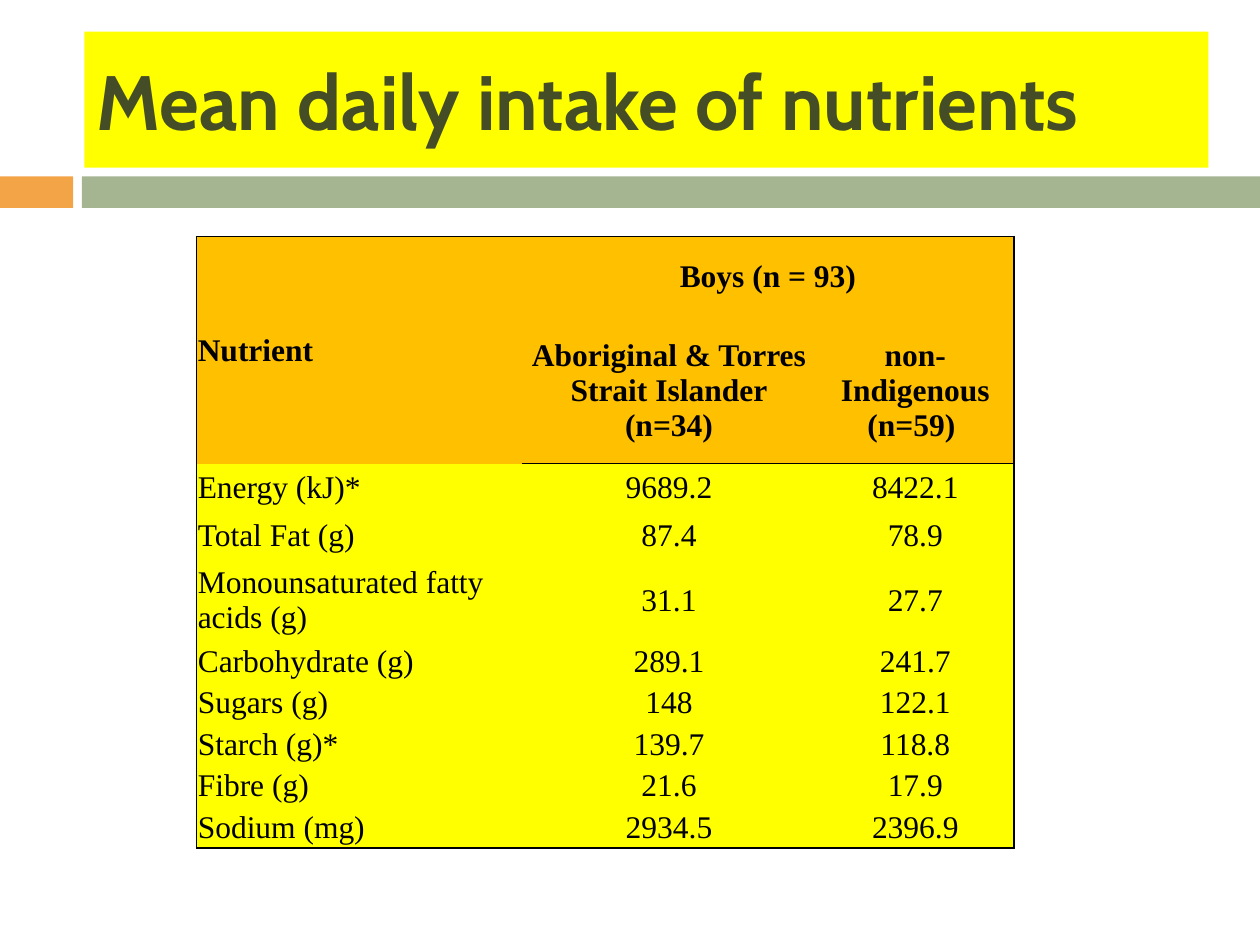
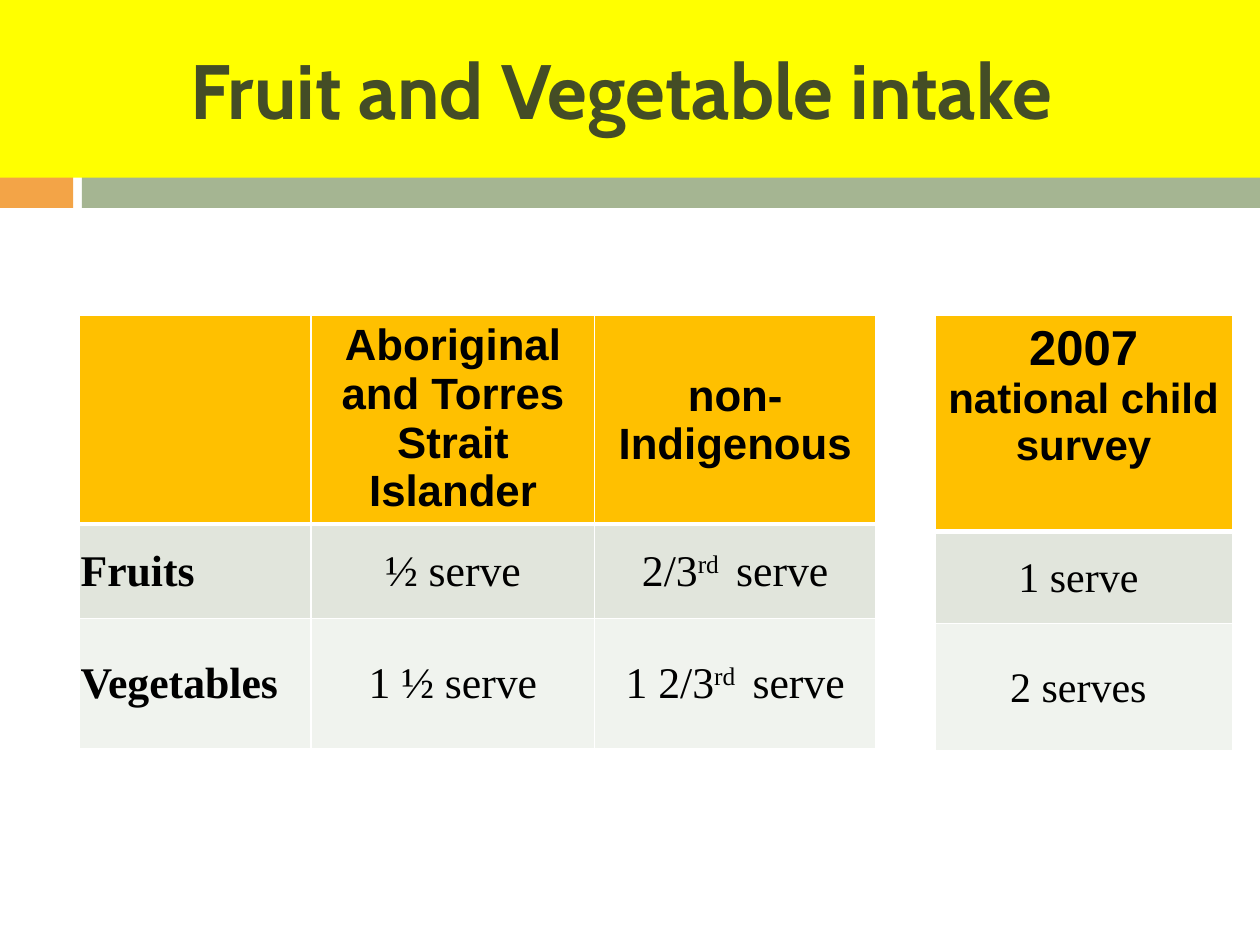
"""Build two slides on children's nutrient, fruit and vegetable intake."""
from pptx import Presentation
from pptx.dml.color import RGBColor
from pptx.enum.shapes import MSO_SHAPE
from pptx.enum.text import MSO_ANCHOR, PP_ALIGN
from pptx.oxml import parse_xml
from pptx.oxml.ns import nsdecls
from pptx.util import Inches, Pt

ORANGE, SAGE, YELLOW, AMBER = "F3A447", "A5B592", "FFFF00", "FFC000"
OLIVE, BLACK, WHITE = "444D26", "000000", "FFFFFF"
STRIPES = ["E1E5DC", "F0F3EE"]
SERIF, SANS, TITLE_FONT = "Times New Roman", "Arial", "Cabin"
NO_GRID_STYLE = "{2D5ABB26-0587-4C30-8999-92F81FD0307C}"
hex_color = RGBColor.from_string

deck = Presentation()
deck.slide_width, deck.slide_height = Inches(10), Inches(7.5)
UNIT = deck.slide_width // 100


def write(paragraph, text, font, size, bold=False, color=BLACK, raised=False):
    for number, line in enumerate(text.split("\n")):
        if number:
            paragraph.add_line_break()
        run = paragraph.add_run()
        run.text = line
        run.font.name, run.font.size, run.font.bold = font, Pt(size), bold
        run.font.color.rgb = hex_color(color)
        if raised:
            run.font._element.set("baseline", "30000")


def style_cell(cell, fill, edges, centred, roomy=False):
    for side in "LRTB":
        if side in edges:
            color, width = edges[side]
            paint = f'<a:solidFill><a:srgbClr val="{color}"/></a:solidFill>'
        else:
            width, paint = 0, "<a:noFill/>"
        cell._tc.get_or_add_tcPr().append(parse_xml(
            f'<a:ln{side} {nsdecls("a")} w="{Pt(width)}">{paint}</a:ln{side}>'))
    cell.fill.solid()
    cell.fill.fore_color.rgb = hex_color(fill)
    cell.margin_left = cell.margin_right = Inches(0.1 if roomy else 0.01)
    cell.margin_top = Inches(0.05 if roomy else 0.01)
    cell.margin_bottom = Inches(0.05 if roomy else 0)
    cell.vertical_anchor = MSO_ANCHOR.TOP if roomy else MSO_ANCHOR.MIDDLE
    cell.text_frame.paragraphs[0].alignment = PP_ALIGN.CENTER if centred else PP_ALIGN.LEFT


titles = [
    ("Mean daily intake of nutrients", (6.7, 2.5, 89.2, 10.8), PP_ALIGN.LEFT),
    ("Fruit and Vegetable intake ", (0, 0, 100, 14.1), PP_ALIGN.CENTER),
]
slides = []
for title, title_area, alignment in titles:
    slide = deck.slides.add_slide(deck.slide_layouts[6])
    slides.append(slide)
    for area, color in [((0, 14, 5.8, 2.5), ORANGE),
                        ((6.5, 14, 93.5, 2.5), SAGE),
                        (title_area, YELLOW)]:
        band = slide.shapes.add_shape(MSO_SHAPE.RECTANGLE, *[int(n * UNIT) for n in area])
        band.shadow.inherit = False
        band.fill.solid()
        band.fill.fore_color.rgb = hex_color(color)
        band.line.fill.background()
    band.text_frame.word_wrap = True
    band.text_frame.vertical_anchor = MSO_ANCHOR.MIDDLE
    heading = band.text_frame.paragraphs[0]
    heading.alignment = alignment
    write(heading, title, TITLE_FONT, 44, True, OLIVE)

nutrients = [
    [["Nutrient"], ["Boys (n = 93)"], []],
    [[], ["Aboriginal & Torres Strait Islander\n(n=34)"], ["non-Indigenous\n(n=59) "]],
    [["Energy (kJ)*"], ["9689.2"], ["8422.1"]],
    [["Total Fat (g)"], ["87.4"], ["78.9"]],
    [["Monounsaturated fatty acids (g)"], ["31.1"], ["27.7"]],
    [["Carbohydrate (g)"], ["289.1"], ["241.7"]],
    [["Sugars (g)"], ["148"], ["122.1"]],
    [["Starch (g)*"], ["139.7"], ["118.8"]],
    [["Fibre (g)"], ["21.6"], ["17.9"]],
    [["Sodium (mg)"], ["2934.5"], ["2396.9"]],
]
serves = [
    [[], ["Aboriginal and Torres Strait Islander"], ["non-Indigenous"]],
    [["Fruits"], ["½ serve"], ["2/3", "rd ", " serve"]],
    [["Vegetables"], ["1 ½ serve"], ["1 2/3", "rd ", " serve"]],
]
survey = [[["2007 ", "national child survey"]], [["1 serve "]], [["2 serves "]]]

tables = [
    (slides[0], nutrients, 18, (15.6, 18.8), [25.8, 23.4, 15.7],
     [6.3, 11.7, 3.8, 3.8, 6.4] + [3.3] * 5),
    (slides[1], serves, 25, (6.3, 25), [18.4, 22.5, 22.3], [16.6, 7.5, 10.3]),
    (slides[1], survey, 24, (74.2, 25), [23.6], [17.2, 7.3, 10.1]),
]
for slide, content, size, (left, top), columns, rows in tables:
    grid = slide.shapes.add_table(
        len(rows), len(columns), int(left * UNIT), int(top * UNIT),
        int(sum(columns) * UNIT), int(sum(rows) * UNIT)).table
    grid._tbl.tblPr.find("{*}tableStyleId").text = NO_GRID_STYLE
    for column, width in zip(grid.columns, columns):
        column.width = int(width * UNIT)
    for row, height in zip(grid.rows, rows):
        row.height = int(height * UNIT)
    is_nutrients = content is nutrients
    header_rows = 2 if is_nutrients else 1
    for r, entries in enumerate(content):
        is_header = r < header_rows
        for c, parts in enumerate(entries):
            if is_nutrients:
                fill = AMBER if is_header else YELLOW
                edges = {}
                if c == 0:
                    edges["L"] = (BLACK, 1)
                if c == 2 or (r == 0 and c == 1):
                    edges["R"] = (BLACK, 1)
                if r == 0:
                    edges["T"] = (BLACK, 0.5)
                if r == 1 and c:
                    edges["B"] = (BLACK, 0.5)
                if r == 2 and c:
                    edges["T"] = (BLACK, 0.5)
                if r == len(rows) - 1:
                    edges["B"] = (BLACK, 1)
            else:
                fill = AMBER if is_header else STRIPES[r - 1]
                edges = {side: (WHITE, 1) for side in "LRTB"}
                if r < 2:
                    edges["T" if r else "B"] = (WHITE, 3)
            is_label = c == 0 and len(columns) > 1
            cell = grid.cell(r, c)
            style_cell(cell, fill, edges, not is_label, is_header and not is_nutrients)
            font = SANS if is_header and not is_nutrients else SERIF
            bold = is_header or (is_label and not is_nutrients)
            for part in parts:
                write(cell.text_frame.paragraphs[0], part, font,
                      28 if part == "2007 " else size, bold, raised=part == "rd ")
    if is_nutrients:
        grid.cell(0, 0).merge(grid.cell(1, 0))
        grid.cell(0, 1).merge(grid.cell(0, 2))
    elif content is serves:
        grid.cell(0, 2).margin_top = Inches(0.45)

deck.save("out.pptx")
